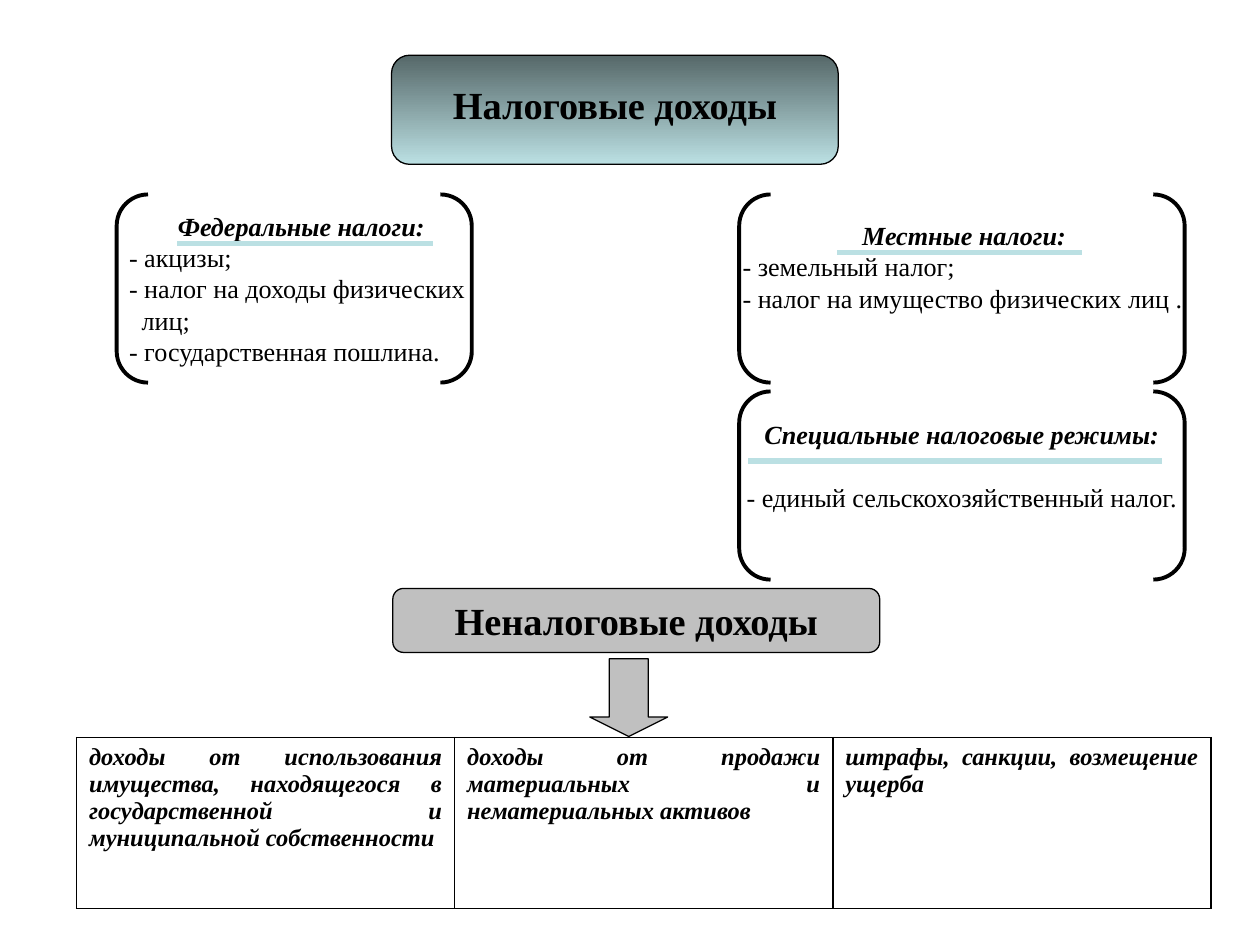
from collections import namedtuple

from lxml import etree
from pptx import Presentation
from pptx import util as u
from pptx.dml.color import RGBColor
from pptx.enum import shapes, text
from pptx.oxml import ns

Box = namedtuple("Box", "left top width height")
CELL = u.Inches(0.1)
FONT = "Times New Roman"
BLACK, GREY, AQUA, SLATE = "000000", "C0C0C0", "BBE0E3", "566869"


def color(hex_code):
    """Turn a hex string into a colour."""
    return RGBColor.from_string(hex_code)


def grid(left, top, width, height):
    """Turn grid columns and rows into a box on the slide."""
    return Box(*(round(cells * CELL) for cells in (left, top, width, height)))


def part(box, left, top, width, height):
    """Find a box inside another from shares of its size."""
    return Box(round(box.left + left * box.width), round(box.top + top * box.height),
               round(width * box.width), round(height * box.height))


def write(para, words, size, bold=False, italic=False, align=text.PP_ALIGN.CENTER):
    """Add one styled run to a paragraph."""
    para.alignment = align
    span = para.add_run()
    span.text = words
    font = span.font
    font.name, font.size, font.bold, font.italic = FONT, u.Pt(size), bold, italic
    font.color.rgb = color(BLACK)


def draw_shape(page, kind, box, weight, fill=None):
    """Draw a black-outlined preset shape, plain or filled."""
    shape = page.shapes.add_shape(kind, *box)
    shape.shadow.inherit = False
    shape.line.color.rgb = color(BLACK)
    shape.line.width = u.Pt(weight)
    if fill:
        shape.fill.solid()
        shape.fill.fore_color.rgb = color(fill)
    else:
        shape.fill.background()
    return shape


def draw_text_box(page, box):
    """Add a wrapping text frame."""
    frame = page.shapes.add_textbox(*box).text_frame
    frame.word_wrap = True
    return frame


def draw_rule(page, box):
    """Draw the accent line along the top of a box."""
    rule = page.shapes.add_connector(shapes.MSO_CONNECTOR.STRAIGHT, box.left, box.top,
                                     box.left + box.width, box.top)
    rule.line.color.rgb = color(AQUA)
    rule.line.width = u.Pt(3)
    etree.SubElement(rule._element.spPr, ns.qn("a:effectLst"))


def draw_tax_title(page, box):
    """Draw the gradient heading for tax revenue."""
    shape = draw_shape(page, shapes.MSO_SHAPE.ROUNDED_RECTANGLE, box, 0.75)
    shape.fill.gradient()
    shape.fill.gradient_angle = 270
    for stop, shade in zip(shape.fill.gradient_stops, (SLATE, AQUA)):
        stop.color.rgb = color(shade)
    frame = draw_text_box(page, part(box, 0.09, 0.18, 0.82, 0.54))
    write(frame.paragraphs[0], "Налоговые доходы", 22, bold=True)


def draw_tax_group(page, box, heading, items, words_share, rule_share, centred=False):
    """Draw a bracketed group with an underlined heading and its items."""
    frame = draw_text_box(page, part(box, *words_share))
    write(frame.paragraphs[0], heading, 15, bold=True, italic=True)
    for item in items:
        para = frame.add_paragraph()
        if centred:
            frame.vertical_anchor = text.MSO_ANCHOR.MIDDLE
            para.space_before = u.Pt(18)
            write(para, item, 15)
        else:
            hanging = para._p.get_or_add_pPr()
            hanging.set("marL", str(CELL))
            hanging.set("indent", str(-CELL))
            write(para, item, 15, align=text.PP_ALIGN.LEFT)
    draw_shape(page, shapes.MSO_SHAPE.DOUBLE_BRACKET, box, 2.25)
    draw_rule(page, part(box, *rule_share, 0))


def draw_other_title(page, box):
    """Draw the grey heading for non-tax revenue."""
    shape = draw_shape(page, shapes.MSO_SHAPE.ROUNDED_RECTANGLE, box, 0.75, GREY)
    shape.text_frame.vertical_anchor = text.MSO_ANCHOR.MIDDLE
    write(shape.text_frame.paragraphs[0], "Неналоговые доходы", 22, bold=True)


def outline_cell(cell):
    """Give a table cell black borders on all sides."""
    props = cell._tc.get_or_add_tcPr()
    for place, side in enumerate(("lnL", "lnR", "lnT", "lnB")):
        border = etree.Element(ns.qn("a:" + side), w=str(u.Pt(1)))
        fill = etree.SubElement(border, ns.qn("a:solidFill"))
        etree.SubElement(fill, ns.qn("a:srgbClr"), val=BLACK)
        props.insert(place, border)


def draw_other_table(page, box, entries):
    """Draw the one-row table of non-tax revenue."""
    table = page.shapes.add_table(1, len(entries), *box).table
    table.first_row = table.horz_banding = False
    for cell, words in zip(table.iter_cells(), entries):
        cell.fill.background()
        outline_cell(cell)
        write(cell.text_frame.paragraphs[0], words, 14, bold=True, italic=True,
              align=text.PP_ALIGN.JUSTIFY)


def main():
    """Build the revenue slide and save it."""
    deck = Presentation()
    deck.slide_width, deck.slide_height = u.Inches(10.04), u.Inches(7.5)
    page = deck.slides.add_slide(deck.slide_layouts[6])
    draw_tax_title(page, grid(31.2, 4.4, 35.6, 8.7))
    draw_tax_group(page, grid(9.3, 15.5, 28.3, 15), "Федеральные налоги:",
                   ["- акцизы;", "- налог на доходы физических лиц;",
                    "- государственная пошлина."],
                   (0, 0.05, 1.04, 0.9), (0.17, 0.26, 0.72))
    draw_tax_group(page, grid(58.9, 15.5, 35.5, 15), "Местные налоги:",
                   ["- земельный налог;", "- налог на имущество физических лиц ."],
                   (-0.02, 0.1, 1.05, 0.57), (0.22, 0.31, 0.55))
    draw_tax_group(page, grid(58.9, 31.2, 35.5, 15), "Специальные налоговые режимы:",
                   ["- единый сельскохозяйственный налог."],
                   (-0.02, 0.11, 1.04, 0.57), (0.02, 0.37, 0.93), centred=True)
    draw_other_title(page, grid(31.3, 46.9, 38.8, 5.1))
    draw_other_table(page, grid(6.1, 58.8, 90.4, 13.6), [
        "доходы от использования имущества, находящегося в государственной "
        "и муниципальной собственности",
        "доходы от продажи материальных и нематериальных активов",
        "штрафы, санкции, возмещение ущерба"])
    draw_shape(page, shapes.MSO_SHAPE.DOWN_ARROW, grid(47, 52.5, 6.2, 6.2), 0.75,
               GREY).adjustments[1] = 0.25
    deck.save("out.pptx")


if __name__ == "__main__":
    main()
